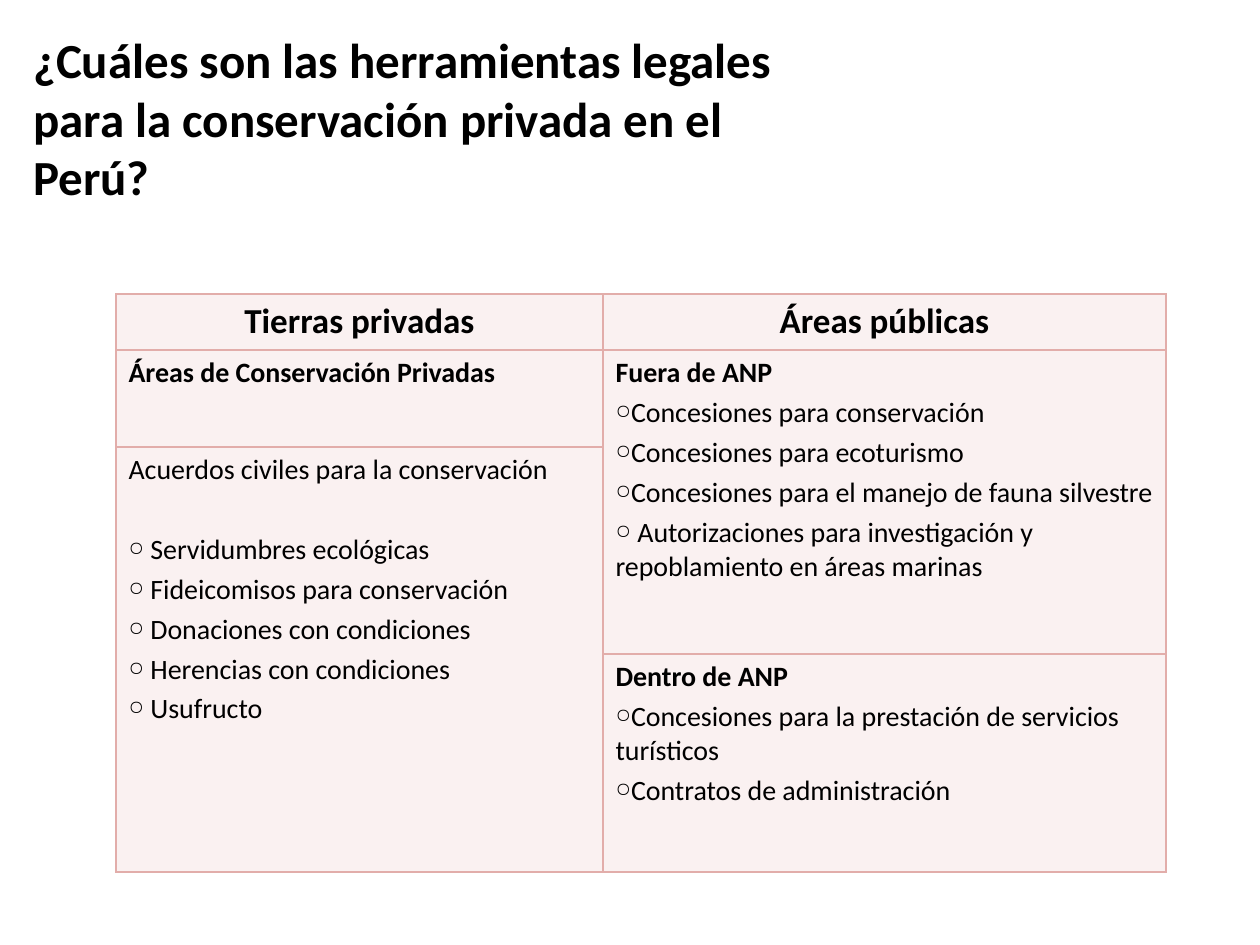
from itertools import product

from lxml import etree
from pptx import Presentation
from pptx import util as u
from pptx.dml.color import RGBColor
from pptx.enum import text
from pptx.oxml import ns

BLACK = RGBColor(0x00, 0x00, 0x00)
BLUSH = RGBColor(0xFA, 0xF1, 0xF1)
ROSE = RGBColor(0xE2, 0xAD, 0xAA)

COLS = (487, 563)
ROWS = (56, 97, 207, 218)
MERGES = (((1, 1), (2, 1)), ((2, 0), (3, 0)))

HEAD = {"size": u.Pt(20), "bold": True}
LEAD = {"size": u.Pt(16), "bold": True}
BODY = {"size": u.Pt(16), "bold": False}

CELLS = {
    (0, 0): ("Tierras privadas", HEAD, ()),
    (0, 1): ("Áreas públicas", HEAD, ()),
    (1, 0): ("Áreas de Conservación Privadas", LEAD, ()),
    (1, 1): ("Fuera de ANP", LEAD, (
        "Concesiones para conservación",
        "Concesiones para ecoturismo",
        "Concesiones para el manejo de fauna silvestre",
        " Autorizaciones para investigación y repoblamiento en áreas marinas",
    )),
    (2, 0): ("Acuerdos civiles para la conservación", BODY, (
        " Servidumbres ecológicas",
        " Fideicomisos para conservación",
        " Donaciones con condiciones",
        " Herencias con condiciones",
        " Usufructo",
    )),
    (3, 1): ("Dentro de ANP", LEAD, (
        "Concesiones para la prestación de servicios turísticos",
        "Contratos de administración",
    )),
}


def px(n):
    """Turn px into EMU at 126 px to the inch."""
    return u.Emu(round(n * 914400 / 126))


def put(obj, vals):
    """Set each attribute named in a dict."""
    for key, val in vals.items():
        setattr(obj, key, val)


def style(para, vals):
    """Give a paragraph its font."""
    put(para.font, {"name": "Calibri", **vals})
    para.font.color.rgb = BLACK


def node(root, tag, **attrs):
    """Add a drawing element under another."""
    return etree.SubElement(root, ns.qn("a:" + tag), attrs)


def bullet(para):
    """Give a paragraph a small ring bullet."""
    props = para._p.get_or_add_pPr()
    put_color = node(props, "buClr")
    node(put_color, "srgbClr", val=str(BLACK))
    node(props, "buSzPct", val="70000")
    node(props, "buChar", char="○")


def border(cell):
    """Draw a thin line on all four sides of a cell."""
    props = cell._tc.get_or_add_tcPr()
    for tag in ("lnL", "lnR", "lnT", "lnB"):
        line = node(props, tag, w=str(u.Pt(1)))
        node(node(line, "solidFill"), "srgbClr", val=str(ROSE))


def write(cell, head, font, items, gap):
    """Fill a cell with a heading and its bulleted items."""
    para = cell.text_frame.paragraphs[0]
    para.text = head
    if font is HEAD:
        para.alignment = text.PP_ALIGN.CENTER
    style(para, font)
    for i, item in enumerate(items):
        para = cell.text_frame.add_paragraph()
        para.text = item
        para.space_before = u.Pt(3.2 if i else gap)
        bullet(para)
        style(para, BODY)


def title(slide, x, y, w, h):
    """Place the slide's question in its box."""
    frame = slide.shapes.add_textbox(px(x), px(y), px(w), px(h)).text_frame
    put(frame, {"word_wrap": True, "margin_right": px(30),
                "vertical_anchor": text.MSO_ANCHOR.TOP})
    para = frame.paragraphs[0]
    para.text = ("¿Cuáles son las herramientas legales "
                 "para la conservación privada en el Perú?")
    style(para, {"size": u.Pt(28), "bold": True})


def tools(slide, x, y):
    """Place the table of legal tools with its corner at x, y."""
    table = slide.shapes.add_table(
        len(ROWS), len(COLS), px(x), px(y), px(sum(COLS)), px(sum(ROWS))).table
    put(table, {"first_row": False, "horz_banding": False})
    for col, w in zip(table.columns, COLS):
        col.width = px(w)
    for row, h in zip(table.rows, ROWS):
        row.height = px(h)
    for spot in product(range(len(ROWS)), range(len(COLS))):
        cell = table.cell(*spot)
        border(cell)
        cell.fill.solid()
        cell.fill.fore_color.rgb = BLUSH
    for start, end in MERGES:
        table.cell(*start).merge(table.cell(*end))
    for spot, (head, font, items) in CELLS.items():
        write(table.cell(*spot), head, font, items, 26 if font is BODY else 3.2)


def main():
    """Build the slide and save it."""
    deck = Presentation()
    put(deck, {"slide_width": px(1260), "slide_height": px(945)})
    slide = deck.slides.add_slide(deck.slide_layouts[6])
    title(slide, 21, 23, 840, 179)
    tools(slide, 116, 294)
    deck.save("out.pptx")


if __name__ == "__main__":
    main()
